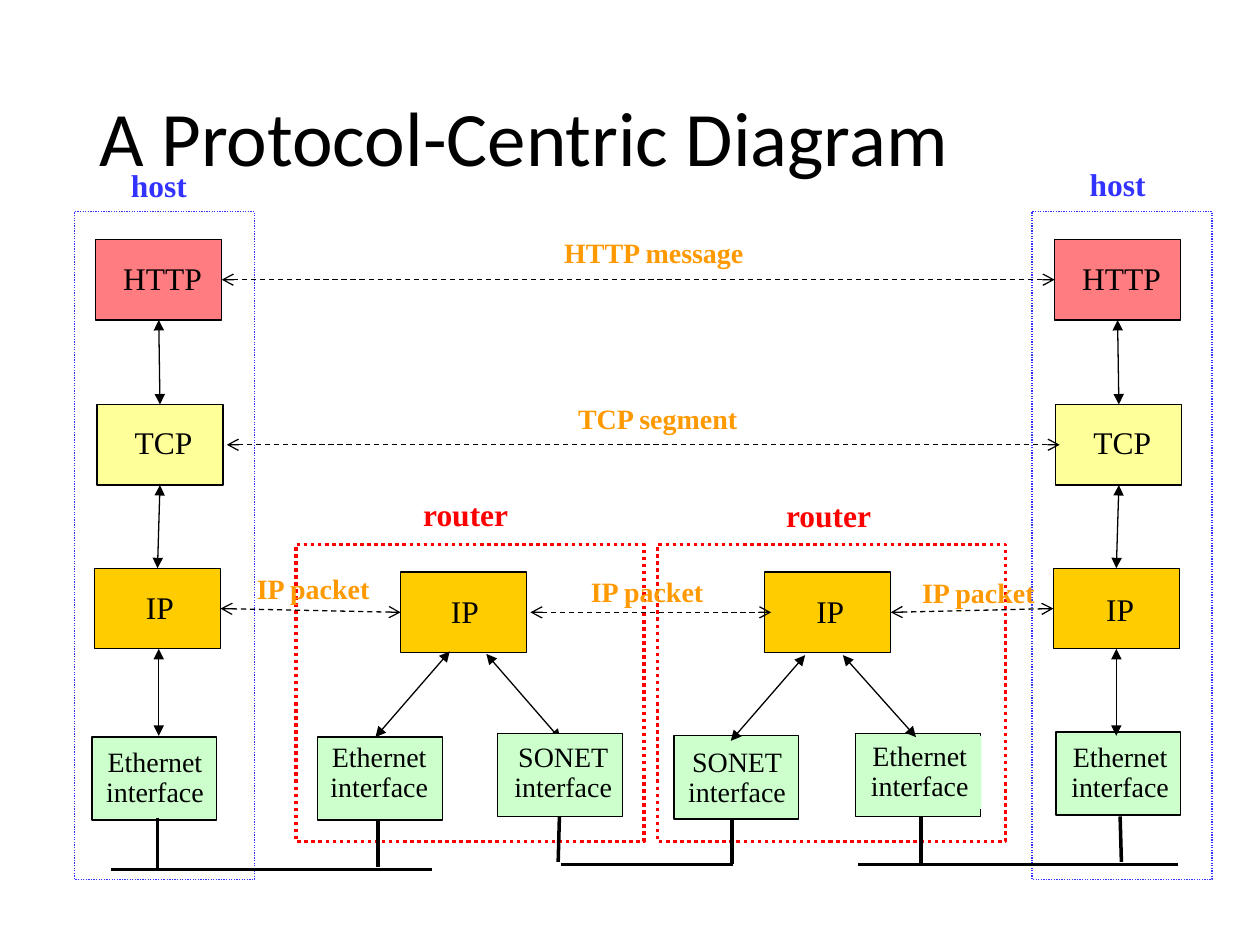
from lxml.etree import SubElement
from pptx import Presentation
from pptx.dml.color import RGBColor
from pptx.enum.dml import MSO_LINE
from pptx.enum.shapes import MSO_CONNECTOR, MSO_SHAPE
from pptx.enum.text import MSO_ANCHOR, MSO_AUTO_SIZE, PP_ALIGN
from pptx.oxml.ns import qn
from pptx.util import Inches, Pt

TITLE = "A Protocol-Centric Diagram"
SERIF = "Times New Roman"
BLACK, BLUE, RED, ORANGE = "000000", "3333FF", "FF0000", "FF9900"
TOP, LEFT, BOTTOM, RIGHT = range(4)
HOST_SHIFT = 7.61  # distance from the left host to the right host

# layer: fill, box size, label size, font size
LAYERS = {
    "HTTP": ("FF7C80", (1, 0.64), (0.83, 0.4), 18),
    "TCP": ("FFFF99", (1, 0.64), (0.66, 0.4), 18),
    "IP": ("FFCC00", (1, 0.64), (0.42, 0.4), 18),
    "Ethernet\ninterface": ("CCFFCC", (0.99, 0.66), (0.98, 0.58), 16),
    "SONET\ninterface": ("CCFFCC", (0.99, 0.66), (0.98, 0.58), 16),
}
ETHERNET, SONET = "Ethernet\ninterface", "SONET\ninterface"

# name: layer, box left and top, label left and top
BOXES = {
    "host 1 IP": ("IP", (0.75, 4.51), (1.06, 4.62)),
    "host 2 IP": ("IP", (8.36, 4.51), (8.68, 4.63)),
    "host 1 Ethernet": (ETHERNET, (0.73, 5.85), (0.74, 5.89)),
    "host 2 Ethernet": (ETHERNET, (8.38, 5.81), (8.4, 5.85)),
    "router 1 IP": ("IP", (3.18, 4.54), (3.48, 4.65)),
    "router 2 IP": ("IP", (6.07, 4.54), (6.38, 4.65)),
    "router 1 Ethernet": (ETHERNET, (2.52, 5.85), (2.52, 5.85)),
    "router 2 Ethernet": (ETHERNET, (6.79, 5.82), (6.81, 5.84)),
    "router 1 SONET": (SONET, (3.95, 5.82), (3.98, 5.85)),
    "router 2 SONET": (SONET, (5.35, 5.84), (5.36, 5.89)),
}
for number, shift in ((1, 0), (2, HOST_SHIFT)):
    BOXES[f"host {number} HTTP"] = ("HTTP", (0.76 + shift, 1.9), (0.88 + shift, 2.01))
    BOXES[f"host {number} TCP"] = ("TCP", (0.77 + shift, 3.21), (0.97 + shift, 3.31))
FILLED_LABELS = {"router 2 Ethernet"}

# Line ends are points, or a box name with a connection site
BACK_ARROW = ((3.86, 5.19), (4.45, 5.87))
LAYER_ARROWS = [
    ((3.57, 5.17), (2.98, 5.85)),
    ((6.39, 5.2), (5.8, 5.88)),
    ((6.69, 5.2), (7.27, 5.85)),
]
for number, x in ((1, 1.26), (2, 8.86)):
    for upper, lower in (("HTTP", "TCP"), ("TCP", "IP")):
        LAYER_ARROWS.append(((f"host {number} {upper}", BOTTOM),
                             (f"host {number} {lower}", TOP)))
    LAYER_ARROWS.append(((x, 5.15), (x, 5.84)))
PEER_ARROWS = [
    (("host 1 HTTP", RIGHT), ("host 2 HTTP", LEFT)),
    ((1.8, 3.53), (8.41, 3.53)),
    (("host 1 IP", RIGHT), ("router 1 IP", LEFT)),
    ((4.21, 4.86), (6.12, 4.86)),
    (("router 2 IP", RIGHT), ("host 2 IP", LEFT)),
]
CABLES = [
    ((1.25, 6.49), (1.25, 6.9)), ((0.88, 6.9), (3.43, 6.9)), ((3, 6.52), (3, 6.88)),
    ((4.44, 6.48), (4.43, 6.84)), ((4.45, 6.86), (5.82, 6.86)), ((5.81, 6.49), (5.81, 6.86)),
    ((7.31, 6.48), (7.31, 6.87)), ((9.35, 6.86), (6.81, 6.86)), ((8.89, 6.48), (8.9, 6.84)),
]

# left, top, width, height, colour, line width
FRAMES = [
    (0.59, 1.68, 1.43, 5.3, BLUE, 0.75),
    (8.19, 1.68, 1.43, 5.3, BLUE, 0.75),
    (2.35, 4.32, 2.76, 2.36, RED, 2),
    (5.22, 4.32, 2.76, 2.36, RED, 2),
]
# text, left, top, width, height, colour, font size
CAPTIONS = [
    ("host", 0.94, 1.27, 0.65, 0.4, BLUE, 18),
    ("host", 8.55, 1.26, 0.65, 0.4, BLUE, 18),
    ("router", 3.26, 3.88, 0.88, 0.4, RED, 18),
    ("router", 6.14, 3.89, 0.88, 0.4, RED, 18),
    ("HTTP message", 4.38, 1.82, 1.64, 0.37, ORANGE, 16),
    ("TCP segment", 4.49, 3.14, 1.48, 0.37, ORANGE, 16),
    ("IP packet", 1.94, 4.49, 1.11, 0.37, ORANGE, 16),
    ("IP packet", 4.59, 4.51, 1.11, 0.37, ORANGE, 16),
    ("IP packet", 7.22, 4.52, 1.11, 0.37, ORANGE, 16),
]

presentation = Presentation()
presentation.slide_width, presentation.slide_height = Inches(10), Inches(7.5)
slide = presentation.slides.add_slide(presentation.slide_layouts[5])
shapes = slide.shapes
box_shapes = {}


def color(value):
    return RGBColor.from_string(value)


def style_runs(paragraph, font_name, size, font_color, bold=False):
    for run in paragraph.runs:
        run.font.name, run.font.size, run.font.bold = font_name, Pt(size), bold
        run.font.color.rgb = color(font_color)


def add_text(text, left, top, width, height, font_color, size, bold=False):
    shape = shapes.add_textbox(*map(Inches, (left, top, width, height)))
    frame = shape.text_frame
    frame.text = text
    frame.word_wrap = False
    frame.auto_size = MSO_AUTO_SIZE.SHAPE_TO_FIT_TEXT
    for paragraph in frame.paragraphs:
        if len(frame.paragraphs) > 1:
            paragraph.alignment, paragraph.line_spacing = PP_ALIGN.CENTER, 0.9
        style_runs(paragraph, SERIF, size, font_color, bold)
    return shape


def add_rectangle(left, top, width, height, line_color, line_width, fill=None):
    shape = shapes.add_shape(MSO_SHAPE.RECTANGLE, *map(Inches, (left, top, width, height)))
    shape.shadow.inherit = False
    shape.line.color.rgb, shape.line.width = color(line_color), Pt(line_width)
    if fill:
        shape.fill.solid()
        shape.fill.fore_color.rgb = color(fill)
    else:
        shape.fill.background()
        shape.line.dash_style = MSO_LINE.ROUND_DOT
    return shape


def add_line(start, end, width=0.75, arrowhead=None, dash=None):
    joined = [isinstance(point[0], str) for point in (start, end)]
    points = [(0, 0) if is_joined else point for is_joined, point in zip(joined, (start, end))]
    line = shapes.add_connector(MSO_CONNECTOR.STRAIGHT, *map(Inches, points[0] + points[1]))
    if joined[0]:
        line.begin_connect(box_shapes[start[0]], start[1])
    if joined[1]:
        line.end_connect(box_shapes[end[0]], end[1])
    line.line.color.rgb, line.line.width = color(BLACK), Pt(width)
    if dash:
        line.line.dash_style = dash
    if arrowhead:
        for tag in ("a:headEnd", "a:tailEnd"):
            SubElement(line.line._get_or_add_ln(), qn(tag), type=arrowhead)
    SubElement(line._element.spPr, qn("a:effectLst"))


# Title
title = shapes.title
title.left, title.top, title.width, title.height = map(Inches, (0.69, 0.4, 8.62, 1.45))
title.text_frame.text = TITLE
title.text_frame.vertical_anchor = MSO_ANCHOR.MIDDLE
heading = title.text_frame.paragraphs[0]
heading.alignment, heading.line_spacing = PP_ALIGN.LEFT, 0.9
style_runs(heading, "Calibri", 44, BLACK)

# Protocol boxes with their labels
add_line(*BACK_ARROW, arrowhead="triangle")
for name, (layer, box_place, label_place) in BOXES.items():
    fill, box_size, label_size, size = LAYERS[layer]
    box_shapes[name] = add_rectangle(*box_place, *box_size, BLACK, 0.75, fill)
    label = add_text(layer, *label_place, *label_size, BLACK, size)
    if name in FILLED_LABELS:
        label.fill.solid()
        label.fill.fore_color.rgb = color(fill)

# Host and router frames
for frame_values in FRAMES:
    add_rectangle(*frame_values)

# Arrows and network cables
for ends in LAYER_ARROWS:
    add_line(*ends, arrowhead="triangle")
for ends in PEER_ARROWS:
    add_line(*ends, arrowhead="arrow", dash=MSO_LINE.DASH)
for ends in CABLES:
    add_line(*ends, width=2)

# Captions
for caption in CAPTIONS:
    add_text(*caption, bold=True)

presentation.save("out.pptx")
